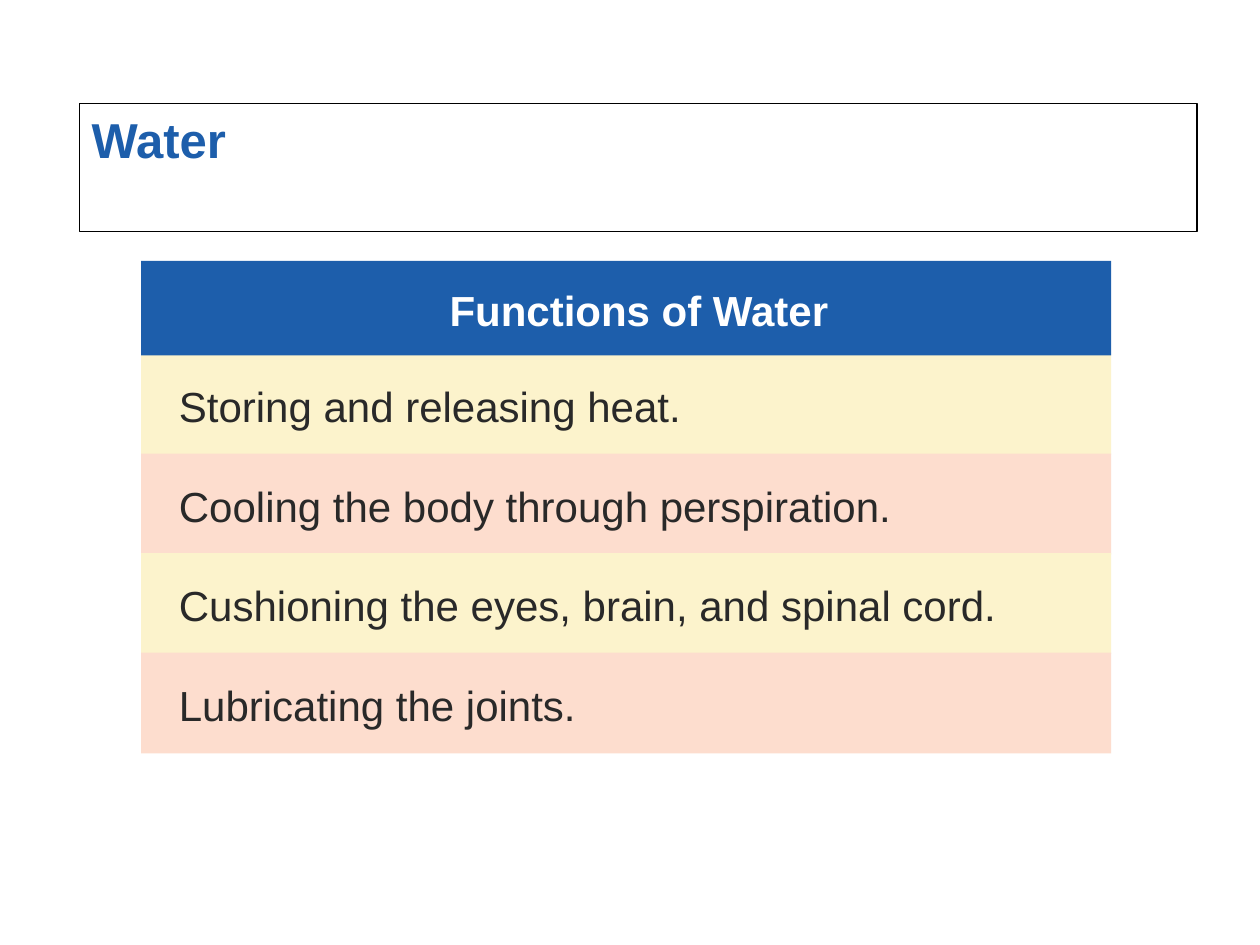
"""Build a slide that lists the functions of water under a titled header."""
from pptx import Presentation, util as u
from pptx.dml.color import RGBColor
from pptx.enum import shapes, text

TITLE = "Water"
HEADER = "Functions of Water"
FUNCTIONS = [
    "Storing and releasing heat.",
    "Cooling the body through perspiration.",
    "Cushioning the eyes, brain, and spinal cord.",
    "Lubricating the joints.",
]
THEME = {
    "font": "Arial", "title_size": 28, "body_size": 24,
    "blue": "1D5EAB", "ink": "292929", "white": "FFFFFF", "outline": "000000",
    "bands": ("FCF3CC", "FDDDCE"),
}
SLIDE_WIDTH, SLIDE_HEIGHT = 10, 7.5
LEFT, WIDTH = 0.112 * SLIDE_WIDTH, 0.77 * SLIDE_WIDTH
HEADER_TOP, HEADER_HEIGHT = 2.07, 0.75
FIRST_ROW_TOP, ROW_PITCH, ROW_HEIGHT = 2.81, 0.79, 0.8


def add_panel(slide, words, box, *, fill, color, size=THEME["body_size"],
              bold=False, align=text.PP_ALIGN.LEFT, anchor=text.MSO_ANCHOR.MIDDLE,
              inset=0.3, spacing=1.05, outline=None):
    """Add a filled rectangle holding one formatted paragraph."""
    panel = slide.shapes.add_shape(
        shapes.MSO_SHAPE.RECTANGLE, *(u.Inches(length) for length in box))
    panel.shadow.inherit = False
    panel.fill.solid()
    panel.fill.fore_color.rgb = RGBColor.from_string(fill)
    if outline:
        panel.line.color.rgb = RGBColor.from_string(outline)
        panel.line.width = u.Pt(0.75)
    else:
        panel.line.fill.background()
    frame = panel.text_frame
    frame.word_wrap = True
    frame.vertical_anchor = anchor
    frame.margin_left = u.Inches(inset)
    paragraph = frame.paragraphs[0]
    paragraph.alignment = align
    paragraph.line_spacing = spacing
    run = paragraph.add_run()
    run.text = words
    run.font.name = THEME["font"]
    run.font.size = u.Pt(size)
    run.font.bold = bold
    run.font.color.rgb = RGBColor.from_string(color)


def main():
    """Lay out the title, the banded rows and the header."""
    deck = Presentation()
    deck.slide_width, deck.slide_height = u.Inches(SLIDE_WIDTH), u.Inches(SLIDE_HEIGHT)
    slide = deck.slides.add_slide(deck.slide_layouts[6])
    add_panel(slide, TITLE, (0.63, 0.82, 8.87, 1.02), fill=THEME["white"],
              color=THEME["blue"], size=THEME["title_size"], bold=True,
              anchor=text.MSO_ANCHOR.TOP, inset=0.1, spacing=1.0,
              outline=THEME["outline"])
    for row, function in enumerate(FUNCTIONS):
        add_panel(slide, function,
                  (LEFT, FIRST_ROW_TOP + row * ROW_PITCH, WIDTH, ROW_HEIGHT),
                  fill=THEME["bands"][row % 2], color=THEME["ink"])
    add_panel(slide, HEADER, (LEFT, HEADER_TOP, WIDTH, HEADER_HEIGHT),
              fill=THEME["blue"], color=THEME["white"], bold=True,
              align=text.PP_ALIGN.CENTER)
    deck.save("out.pptx")


if __name__ == "__main__":
    main()
